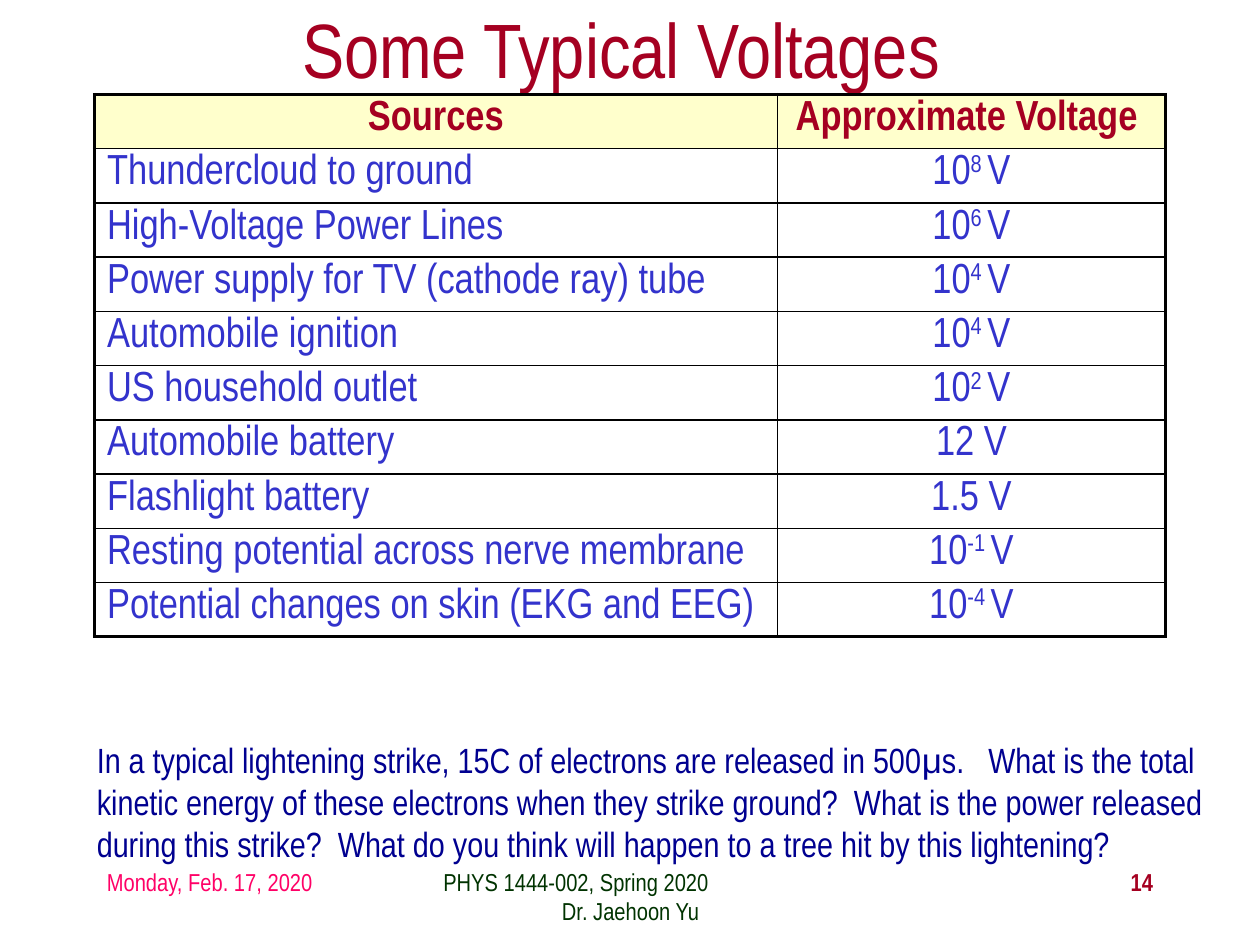
import pptx
import pptx.dml.color
import pptx.enum.text
import pptx.oxml
import pptx.oxml.ns
import pptx.util
from pptx.util import Inches

ALIGN = pptx.enum.text.PP_ALIGN
MIDDLE = pptx.enum.text.MSO_ANCHOR.MIDDLE
CRIMSON, BLUE, NAVY, CREAM, BLACK = "A50021", "3333CC", "000090", "FFFFCC", "000000"
HEADINGS = ("Sources", "Approximate Voltage ")
VOLTAGES = [
    ("Thundercloud to ground", ("10", "8 ", "V")),
    ("High-Voltage Power Lines", ("10", "6 ", "V")),
    ("Power supply for TV (cathode ray) tube", ("10", "4 ", "V")),
    ("Automobile ignition", ("10", "4 ", "V")),
    ("US household outlet", ("10", "2 ", "V")),
    ("Automobile battery", ("12 V",)),
    ("Flashlight battery", ("1.5 V",)),
    ("Resting potential across nerve membrane", ("10", "-1 ", "V")),
    ("Potential changes on skin (EKG and EEG)", ("10", "-4 ", "V")),
]
QUESTION = (
    "In a typical lightening strike, 15C of electrons are released in 500",
    "μ",
    "s.   What is the total kinetic energy of these electrons when they strike ground?  "
    "What is the power released during this strike?  "
    "What do you think will happen to a tree hit by this lightening?",
)


def rgb(value):
    """Turn a hex string into a colour."""
    return pptx.dml.color.RGBColor.from_string(value)


def write(paragraph, parts, size, color, bold=False, align=ALIGN.LEFT):
    """Fill a paragraph with runs in one style and return the runs."""
    paragraph.alignment = align
    for part in parts:
        run = paragraph.add_run()
        run.text = part
        run.font.name = "Arial Narrow"
        run.font.size = pptx.util.Pt(size)
        run.font.bold = bold
        run.font.color.rgb = rgb(color)
    return paragraph.runs


def add_text_frame(slide, left, top, width, height):
    """Add a wrapping text box and return its text frame."""
    frame = slide.shapes.add_textbox(left, top, width, height).text_frame
    frame.word_wrap = True
    return frame


def place_title(slide, left, top, width, height):
    """Place and format the title placeholder."""
    title = slide.shapes.title
    title.left, title.top, title.width, title.height = left, top, width, height
    title.text_frame.vertical_anchor = MIDDLE
    write(title.text_frame.paragraphs[0], ["Some Typical Voltages "], 44, CRIMSON, align=ALIGN.CENTER)


def draw_borders(cell, widths):
    """Draw the left, right, top and bottom borders of a cell."""
    properties = cell._tc.get_or_add_tcPr()
    for index, (side, width) in enumerate(zip("LRTB", widths)):
        border = pptx.oxml.parse_xml(
            f'<a:ln{side} {pptx.oxml.ns.nsdecls("a")} w="{pptx.util.Pt(width)}">'
            f'<a:solidFill><a:srgbClr val="{BLACK}"/></a:solidFill></a:ln{side}>'
        )
        properties.insert(index, border)


def add_voltage_table(slide, left, top, width, height):
    """Add the table of sources and voltages."""
    last = len(VOLTAGES)
    table = slide.shapes.add_table(last + 1, 2, left, top, width, height).table
    table.first_row = table.horz_banding = False
    table.columns[0].width = Inches(5.42)
    table.columns[1].width = width - Inches(5.42)
    rows = [[(heading,) for heading in HEADINGS]]
    rows += [[(source,), voltage] for source, voltage in VOLTAGES]
    for r, row in enumerate(rows):
        for c, parts in enumerate(row):
            cell = table.cell(r, c)
            cell.vertical_anchor = MIDDLE
            cell.margin_top, cell.margin_bottom = 0, Inches(0.03)
            header = r == 0
            if header:
                cell.fill.solid()
                cell.fill.fore_color.rgb = rgb(CREAM)
            else:
                cell.fill.background()
            align = ALIGN.CENTER if header or c == 1 else ALIGN.LEFT
            color = CRIMSON if header else BLUE
            runs = write(cell.text_frame.paragraphs[0], parts, 24, color, header, align)
            if len(runs) == 3:
                runs[1]._r.get_or_add_rPr().set("baseline", "30000")
            outer = (c == 0, c == 1, header, r == last)
            draw_borders(cell, [2.25 if edge else 1 for edge in outer])


def add_question(slide, left, top, width, height):
    """Add the question about the lightning strike."""
    frame = add_text_frame(slide, left, top, width, height)
    runs = write(frame.paragraphs[0], QUESTION, 20, NAVY)
    runs[1].font.name = "Arial"


def add_footer(slide, left, top, width, height):
    """Add the date, course and page number."""
    date = add_text_frame(slide, left, top, Inches(2.33), height)
    write(date.paragraphs[0], ["Monday, Feb. 17, 2020"], 14, "FF0066")
    course = add_text_frame(slide, left + Inches(2.67), top, Inches(3.17), height)
    write(course.paragraphs[0], ["PHYS 1444-002, Spring 2020"], 14, "003300")
    write(course.add_paragraph(), ["Dr. Jaehoon Yu"], 14, "003300", align=ALIGN.CENTER)
    number_width = Inches(2.08)
    number = add_text_frame(slide, left + width - number_width, top, number_width, height)
    write(number.paragraphs[0], ["14"], 14, CRIMSON, True, ALIGN.RIGHT)


def main():
    """Build and save the slide."""
    deck = pptx.Presentation()
    deck.slide_width, deck.slide_height = Inches(10), Inches(7.5)
    slide = deck.slides.add_slide(deck.slide_layouts[5])
    left, width = Inches(0.75), Inches(8.5)
    add_footer(slide, left, Inches(6.83), width, Inches(0.5))
    place_title(slide, left, Inches(0), width, Inches(0.75))
    add_voltage_table(slide, left, Inches(0.75), width, Inches(4.14))
    add_question(slide, Inches(0.67), Inches(5.81), Inches(9), Inches(1.11))
    deck.save("out.pptx")


if __name__ == "__main__":
    main()
